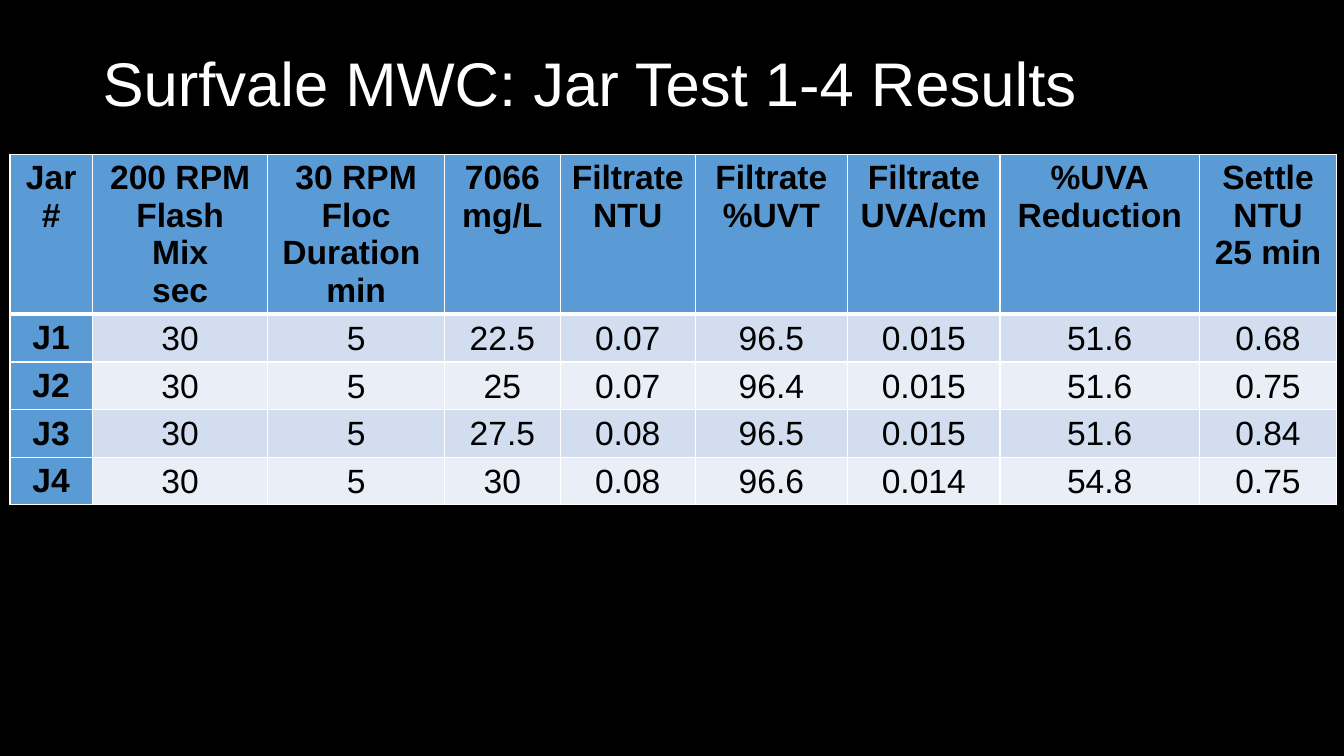
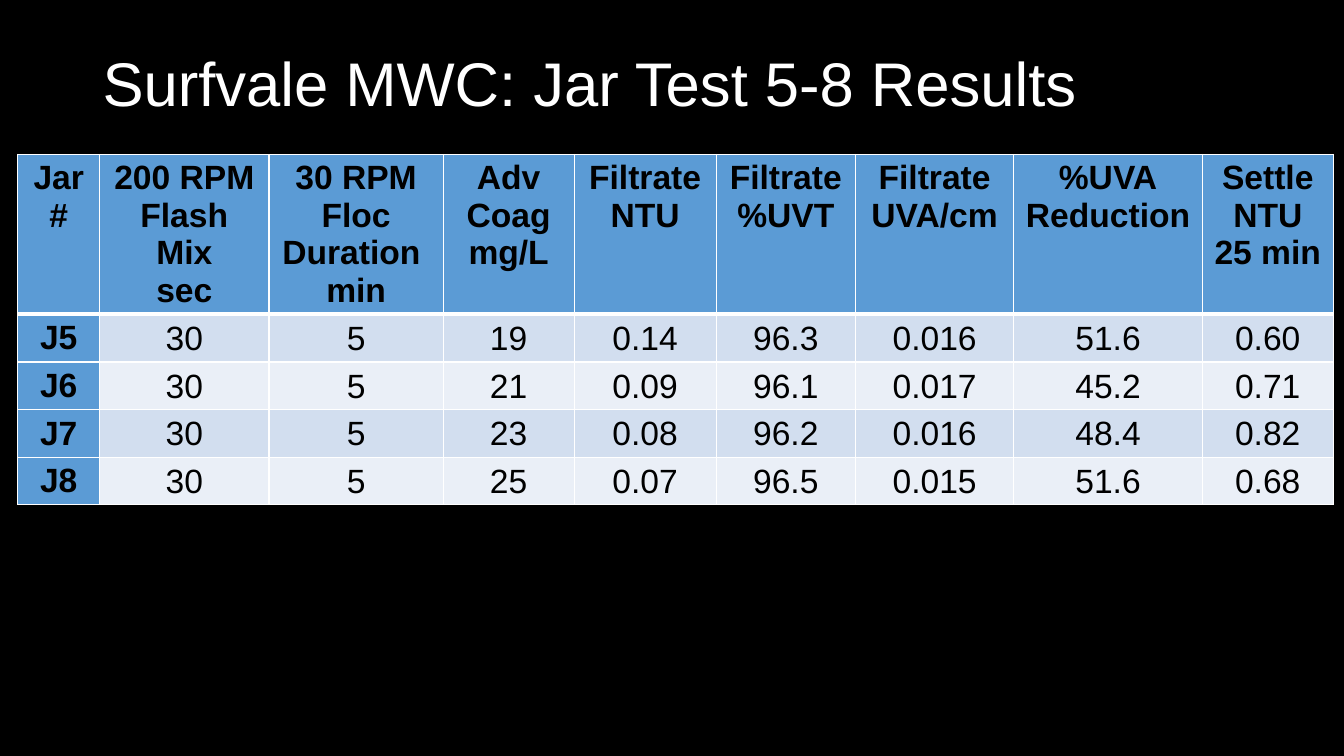
from pptx import Presentation
from pptx.dml.color import RGBColor
from pptx.enum.text import MSO_ANCHOR as Anchor, MSO_AUTO_SIZE as AutoSize, PP_ALIGN as Align
from pptx.oxml.ns import qn
from pptx.util import Cm, Pt
from lxml.etree import SubElement

BLACK = RGBColor(0x00, 0x00, 0x00)
WHITE = RGBColor(0xFF, 0xFF, 0xFF)
HEADING_BLUE = RGBColor(0x5B, 0x9B, 0xD5)
BANDS = (RGBColor(0xD2, 0xDE, 0xEF), RGBColor(0xEA, 0xEF, 0xF7))

TITLE_ONLY = 5
HEADER_HEIGHT, ROW_HEIGHT = 4.03, 1.2


class ResultsDeck:
    """Holds the shared style and the current slide."""

    font_name = "Arial"
    title_size = Pt(44)
    table_size = Pt(24)

    def __init__(self):
        self.prs = Presentation()
        self.prs.slide_width, self.prs.slide_height = Cm(33.87), Cm(19.05)
        backdrop = self.prs.slide_master.background.fill
        backdrop.solid()
        backdrop.fore_color.rgb = BLACK
        self.slide = None

    def new_slide(self, heading):
        self.slide = self.prs.slides.add_slide(self.prs.slide_layouts[TITLE_ONLY])
        title = self.slide.shapes.title
        title.left, title.top, title.width, title.height = Cm(2.33), Cm(0.33), Cm(29.21), Cm(3.68)
        frame = title.text_frame
        frame.text = heading
        frame.auto_size = AutoSize.NONE
        frame.vertical_anchor = Anchor.MIDDLE
        line = frame.paragraphs[0]
        line.line_spacing = 0.9
        self.style(line, Align.LEFT, self.title_size, WHITE)

    def style(self, paragraph, align, size, color, bold=False):
        paragraph.alignment = align
        font = paragraph.font
        font.name, font.size, font.bold = self.font_name, size, bold
        font.color.rgb = color

    def results_table(self, left, widths, headers, results):
        rows = [headers, *results]
        height = HEADER_HEIGHT + ROW_HEIGHT * len(results)
        table = self.slide.shapes.add_table(
            len(rows), len(headers), Cm(left), Cm(3.89), Cm(sum(widths)), Cm(height)).table
        table.first_col = True
        for column, width in zip(table.columns, widths):
            column.width = Cm(width)
        for r, values in enumerate(rows):
            table.rows[r].height = Cm(ROW_HEIGHT if r else HEADER_HEIGHT)
            for c, value in enumerate(values):
                self.fill_cell(table.cell(r, c), value, r, c)

    def fill_cell(self, cell, value, r, c):
        is_heading = r == 0 or c == 0
        cell.text = value
        for line in cell.text_frame.paragraphs:
            self.style(line, Align.CENTER, self.table_size, BLACK, is_heading)
        if not is_heading:
            cell.vertical_anchor = Anchor.MIDDLE
            cell.margin_left = cell.margin_right = cell.margin_top = Cm(0.03)
            cell.margin_bottom = 0
        # The rule under the header row is heavier than the others
        self.border(cell, top=3 if r == 1 else 1, bottom=3 if r == 0 else 1)
        cell.fill.solid()
        cell.fill.fore_color.rgb = HEADING_BLUE if is_heading else BANDS[(r - 1) % 2]

    def border(self, cell, top, bottom):
        properties = cell._tc.get_or_add_tcPr()
        for side, points in (("L", 1), ("R", 1), ("T", top), ("B", bottom)):
            edge = SubElement(properties, qn(f"a:ln{side}"), w=str(Pt(points)))
            SubElement(SubElement(edge, qn("a:solidFill")), qn("a:srgbClr"), val=str(WHITE))


def column_heads(coagulant):
    return ["Jar\n#", "200 RPM\nFlash\nMix\nsec", "30 RPM\nFloc\nDuration \nmin",
            f"{coagulant}\nmg/L", "Filtrate\nNTU", "Filtrate\n%UVT", "Filtrate\nUVA/cm",
            "%UVA\nReduction", "Settle\nNTU\n25 min"]


# Jar, flash mix, floc, dose, NTU, %UVT, UVA/cm, %UVA reduction, settled NTU
JARS_1_4 = [
    ("J1", "30", "5", "22.5", "0.07", "96.5", "0.015", "51.6", "0.68"),
    ("J2", "30", "5", "25", "0.07", "96.4", "0.015", "51.6", "0.75"),
    ("J3", "30", "5", "27.5", "0.08", "96.5", "0.015", "51.6", "0.84"),
    ("J4", "30", "5", "30", "0.08", "96.6", "0.014", "54.8", "0.75"),
]
JARS_5_8 = [
    ("J5", "30", "5", "19", "0.14", "96.3", "0.016", "51.6", "0.60"),
    ("J6", "30", "5", "21", "0.09", "96.1", "0.017", "45.2", "0.71"),
    ("J7", "30", "5", "23", "0.08", "96.2", "0.016", "48.4", "0.82"),
    ("J8", "30", "5", "25", "0.07", "96.5", "0.015", "51.6", "0.68"),
]

# Jar range, coagulant, table left edge, column widths, results
TESTS = [
    ("1-4", "7066", 0.25, (2.08, 4.42, 4.45, 2.92, 3.4, 3.84, 3.84, 5.03, 3.45), JARS_1_4),
    ("5-8", "Adv\nCoag", 0.45, (2.06, 4.27, 4.39, 3.3, 3.58, 3.51, 3.99, 4.75, 3.3), JARS_5_8),
]


def main():
    deck = ResultsDeck()
    for jars, coagulant, left, widths, results in TESTS:
        deck.new_slide(f"Surfvale MWC: Jar Test {jars} Results")
        deck.results_table(left, widths, column_heads(coagulant), results)
    deck.prs.save("out.pptx")


if __name__ == "__main__":
    main()
